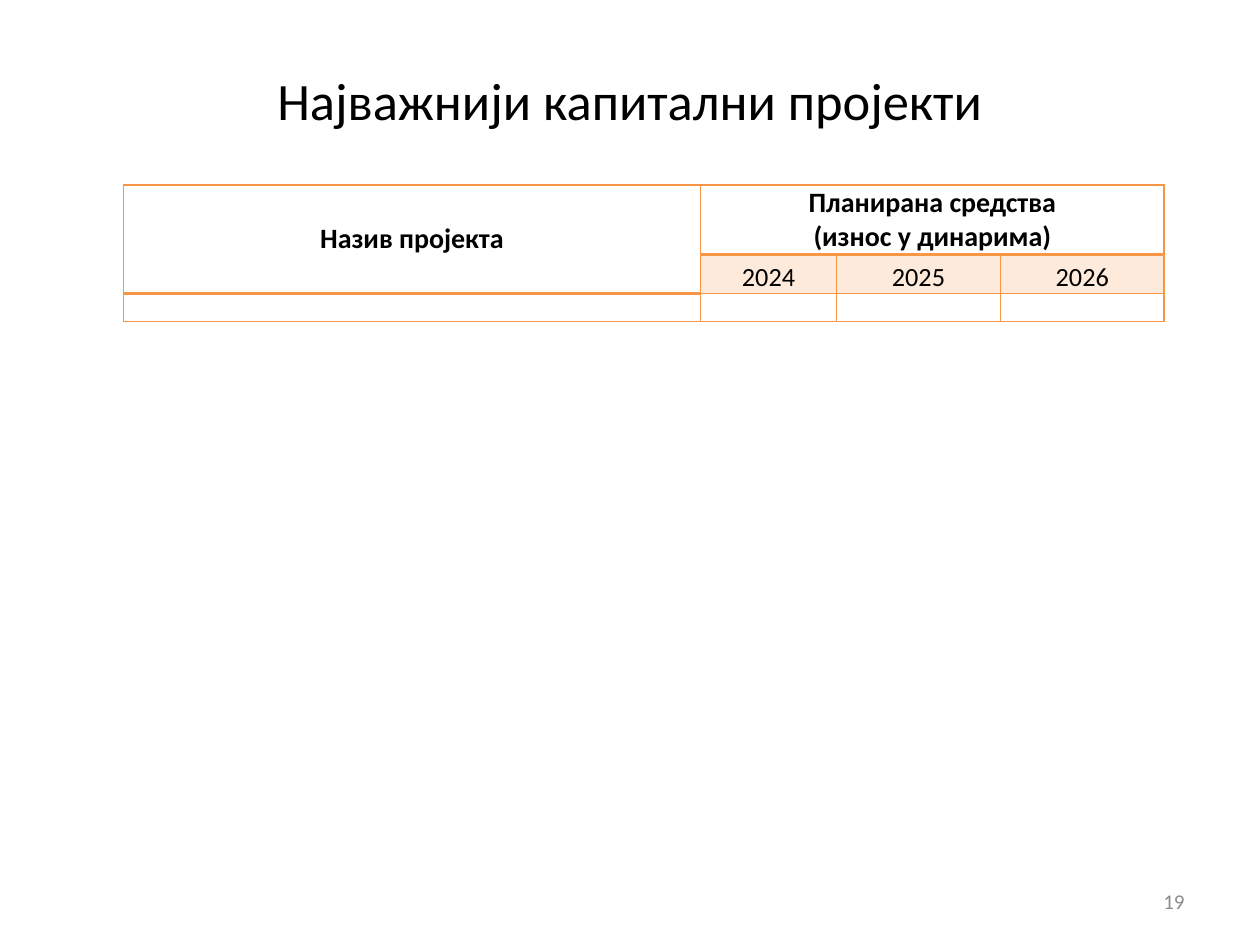
"""Build the slide listing the most important capital projects."""
import pptx
import pptx.dml.color
import pptx.enum.text
import pptx.oxml
import pptx.oxml.ns
import pptx.util

WIDTH, HEIGHT = pptx.util.Inches(10), pptx.util.Inches(7.5)
BLACK = pptx.dml.color.RGBColor(0x00, 0x00, 0x00)
GREY = pptx.dml.color.RGBColor(0x8C, 0x8C, 0x8C)
ORANGE = pptx.dml.color.RGBColor(0xF7, 0x96, 0x46)
PEACH = pptx.dml.color.RGBColor(0xFD, 0xEA, 0xDA)
COLUMNS = (4.58, 1.08, 1.3, 1.3)
ROWS = (0.55, 0.31, 0.22)
YEARS = ("2024", "2025", "2026")
ALIGN = pptx.enum.text.PP_ALIGN
ANCHOR = pptx.enum.text.MSO_ANCHOR


def write(tf, text, size, color=BLACK, bold=False, align=ALIGN.CENTER):
    """Fill a text frame, one paragraph per line of text."""
    tf.text = text
    for p in tf.paragraphs:
        p.alignment = align
        p.font.name = "Calibri"
        p.font.size = pptx.util.Pt(size)
        p.font.bold = bold
        p.font.color.rgb = color


def set_borders(cell, bottom):
    """Draw the four orange edges of a cell, with the given bottom width."""
    tc_pr = cell._tc.get_or_add_tcPr()
    for i, (side, width) in enumerate(zip("LRTB", (1, 1, 1, bottom))):
        tc_pr.insert(i, pptx.oxml.parse_xml(
            f'<a:ln{side} {pptx.oxml.ns.nsdecls("a")} w="{pptx.util.Pt(width)}">'
            f'<a:solidFill><a:srgbClr val="{ORANGE}"/></a:solidFill></a:ln{side}>'))


def format_cell(cell, text="", size=10, bold=False, fill=None,
                anchor=ANCHOR.BOTTOM, bottom=1):
    """Write a table cell and set its margins, fill and borders."""
    write(cell.text_frame, text, size, bold=bold)
    cell.vertical_anchor = anchor
    cell.margin_left = cell.margin_right = pptx.util.Inches(0.07)
    cell.margin_top = cell.margin_bottom = 0
    if fill is None:
        cell.fill.background()
    else:
        cell.fill.solid()
        cell.fill.fore_color.rgb = fill
    set_borders(cell, bottom)


def add_project_table(s):
    """Add the table of projects and planned funds by year."""
    frame = s.shapes.add_table(
        len(ROWS), len(COLUMNS), pptx.util.Inches(0.98), pptx.util.Inches(1.47),
        pptx.util.Inches(sum(COLUMNS)), pptx.util.Inches(sum(ROWS)))
    table = frame.table
    table.first_row = table.horz_banding = False
    for column, width in zip(table.columns, COLUMNS):
        column.width = pptx.util.Inches(width)
    for row, height in zip(table.rows, ROWS):
        row.height = pptx.util.Inches(height)
    table.cell(0, 0).merge(table.cell(1, 0))
    table.cell(0, 1).merge(table.cell(0, 3))
    format_cell(table.cell(0, 0), "Назив пројекта", 16, True,
                anchor=ANCHOR.MIDDLE, bottom=2)
    format_cell(table.cell(0, 1), "Планирана средства\n(износ у динарима)", 16, True,
                bottom=2)
    for cell in (table.cell(0, 2), table.cell(0, 3), table.cell(1, 0)):
        set_borders(cell, 2)
    for i, year in enumerate(YEARS, 1):
        format_cell(table.cell(1, i), year, 15, fill=PEACH)
    for i in range(len(COLUMNS)):
        format_cell(table.cell(2, i))


def place_title(s, text):
    """Move the title placeholder and write it."""
    title = s.shapes.title
    title.left, title.top = int(WIDTH * 0.05), int(HEIGHT * 0.04)
    title.width, title.height = int(WIDTH * 0.9), int(HEIGHT * 0.13)
    title.text_frame.vertical_anchor = ANCHOR.MIDDLE
    write(title.text_frame, text, 30)


def add_page_number(s, number):
    """Add the page number at the lower right."""
    tf = s.shapes.add_textbox(
        pptx.util.Inches(7.17), pptx.util.Inches(6.95),
        pptx.util.Inches(2.33), pptx.util.Inches(0.4)).text_frame
    tf.word_wrap = True
    tf.vertical_anchor = ANCHOR.MIDDLE
    write(tf, number, 12, GREY, align=ALIGN.RIGHT)


def main():
    """Build and save the slide."""
    prs = pptx.Presentation()
    prs.slide_width, prs.slide_height = WIDTH, HEIGHT
    s = prs.slides.add_slide(prs.slide_layouts[5])
    add_project_table(s)
    add_page_number(s, "19")
    place_title(s, "Најважнији капитални пројекти")
    prs.save("out.pptx")


if __name__ == "__main__":
    main()
